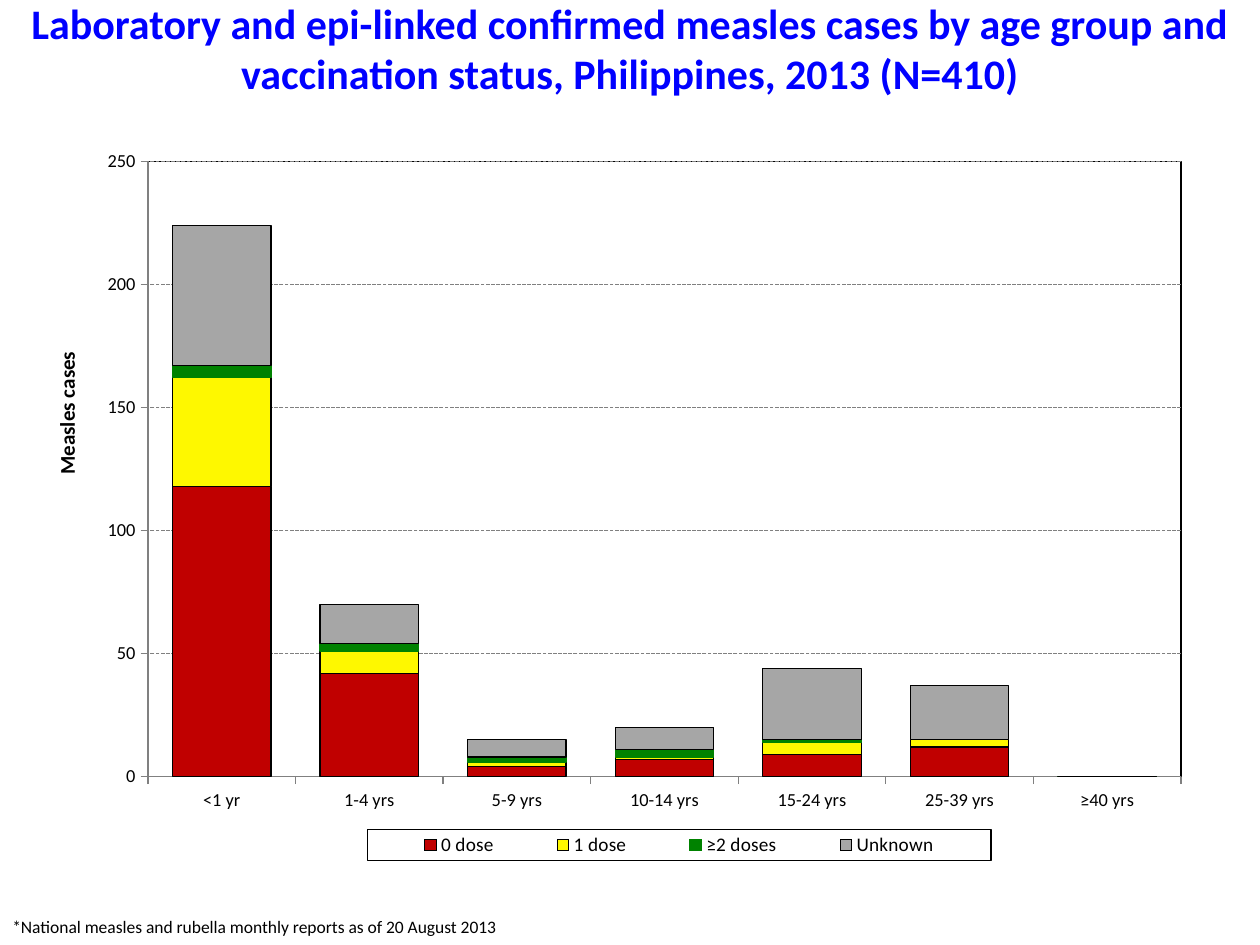
from lxml.etree import SubElement
from pptx import Presentation
from pptx.chart.data import CategoryChartData
from pptx.dml.color import RGBColor
from pptx.enum.chart import XL_CHART_TYPE as ChartType, XL_LEGEND_POSITION as LegendPos, XL_TICK_MARK as Tick
from pptx.enum.dml import MSO_LINE as Dash
from pptx.enum.text import MSO_ANCHOR as Anchor, PP_ALIGN as Align
from pptx.oxml import parse_xml
from pptx.oxml.ns import nsdecls, qn
from pptx.util import Inches, Pt

WIDTH, HEIGHT = 10, 7.5
FONT = "Calibri"
BLACK, BLUE, GRAY = "000000", "0000FF", "808080"

AGE_GROUPS = ["<1 yr", "1-4 yrs", "5-9 yrs", "10-14 yrs", "15-24 yrs", "25-39 yrs", "≥40 yrs"]
# Vaccination status: cases by age group, fill, outline
DOSES = {
    "0 dose": ([118, 42, 4, 7, 9, 12, 0], "C00000", BLACK),
    "1 dose": ([44, 9, 2, 1, 5, 3, 0], "FEF800", BLACK),
    "≥2 doses": ([5, 3, 2, 3, 1, 0, 0], "008200", "008200"),
    "Unknown": ([57, 16, 7, 9, 29, 22, 0], "A6A6A6", BLACK),
}


def color(value):
    return RGBColor.from_string(value)


def style_font(font, size, value=BLACK, bold=False):
    font.name, font.size, font.bold = FONT, Pt(size), bold
    font.color.rgb = color(value)


def style_line(line, value, width=0.75):
    line.color.rgb = color(value)
    line.width = Pt(width)


def add_text(slide, box, words, size, value=BLACK, bold=False,
             align=Align.LEFT, anchor=Anchor.TOP):
    frame = slide.shapes.add_textbox(*map(Inches, box)).text_frame
    frame.word_wrap = True
    frame.vertical_anchor = anchor
    paragraph = frame.paragraphs[0]
    paragraph.alignment = align
    run = paragraph.add_run()
    run.text = words
    style_font(run.font, size, value, bold)
    return paragraph


def place(element, after, inner=False, **shares):
    """Position a chart part by shares of the chart's size."""
    for old in element.findall(qn("c:layout")):
        element.remove(old)
    layout = parse_xml(f"<c:layout {nsdecls('c')}/>")
    manual = SubElement(layout, qn("c:manualLayout"))
    if inner:
        SubElement(manual, qn("c:layoutTarget")).set("val", "inner")
    for side in "xy":
        SubElement(manual, qn(f"c:{side}Mode")).set("val", "edge")
    for side, share in shares.items():
        SubElement(manual, qn(f"c:{side}")).set("val", str(share))
    if after:
        element.find(qn(after)).addnext(layout)
    else:
        element.insert(0, layout)


def outline_plot(plot_area):
    plot_area.append(parse_xml(
        f'<c:spPr {nsdecls("c", "a")}><a:noFill/><a:ln w="9525"><a:solidFill>'
        f'<a:srgbClr val="{BLACK}"/></a:solidFill></a:ln></c:spPr>'))


def outline_legend(legend):
    legend.find(qn("c:overlay")).addnext(parse_xml(
        f'<c:spPr {nsdecls("c", "a")}><a:ln w="9525"><a:solidFill>'
        f'<a:srgbClr val="{BLACK}"/></a:solidFill></a:ln></c:spPr>'))


def add_cases_chart(slide, box):
    data = CategoryChartData()
    data.categories = AGE_GROUPS
    for dose, (cases, _, _) in DOSES.items():
        data.add_series(dose, cases)
    chart = slide.shapes.add_chart(ChartType.COLUMN_STACKED, *map(Inches, box), data).chart
    style_font(chart.font, 10)
    chart.has_title = False

    # Stacked columns
    plot = chart.plots[0]
    plot.gap_width, plot.overlap, plot.vary_by_categories = 50, 100, False
    for series, (_, fill, outline) in zip(plot.series, DOSES.values()):
        series.format.fill.solid()
        series.format.fill.fore_color.rgb = color(fill)
        style_line(series.format.line, outline)

    # Axes and gridlines
    ages, cases = chart.category_axis, chart.value_axis
    for axis in (ages, cases):
        axis.major_tick_mark, axis.minor_tick_mark = Tick.OUTSIDE, Tick.NONE
        style_font(axis.tick_labels.font, 10.5)
        style_line(axis.format.line, GRAY)
    cases.minimum_scale, cases.maximum_scale, cases.major_unit = 0, 250, 50
    cases.has_major_gridlines = True
    grid = cases.major_gridlines.format.line
    style_line(grid, GRAY)
    grid.dash_style = Dash.SQUARE_DOT

    # Axis title
    cases.has_title = True
    run = cases.axis_title.text_frame.paragraphs[0].add_run()
    run.text = "Measles cases"
    style_font(run.font, 12, bold=True)
    place(cases.axis_title._element, "c:tx", x=0.02, y=0.29)

    # Legend
    chart.has_legend = True
    legend = chart.legend
    legend.position, legend.include_in_layout = LegendPos.BOTTOM, False
    style_font(legend.font, 11)
    place(legend._element, "c:legendPos", x=0.29, y=0.946, w=0.528, h=0.042)
    outline_legend(legend._element)

    # Plot frame
    plot_area = chart._chartSpace.chart.plotArea
    place(plot_area, None, inner=True, x=0.104, y=0.036, w=0.875, h=0.838)
    outline_plot(plot_area)


def build():
    deck = Presentation()
    deck.slide_width, deck.slide_height = Inches(WIDTH), Inches(HEIGHT)
    slide = deck.slides.add_slide(deck.slide_layouts[6])
    add_text(slide, (0, 0, WIDTH, 0.76),
             "Laboratory and epi-linked confirmed measles cases by age group and "
             "vaccination status, Philippines, 2013 (N=410)",
             24, BLUE, True, Align.CENTER, Anchor.MIDDLE)
    add_cases_chart(slide, (0.2, 1.07, 9.37, 5.83))
    note = add_text(slide, (0, HEIGHT - 0.28, 5.87, 0.28),
                    "*National measles and rubella monthly reports as of 20 August 2013", 10)
    note.space_before = Pt(2)
    deck.save("out.pptx")


if __name__ == "__main__":
    build()
